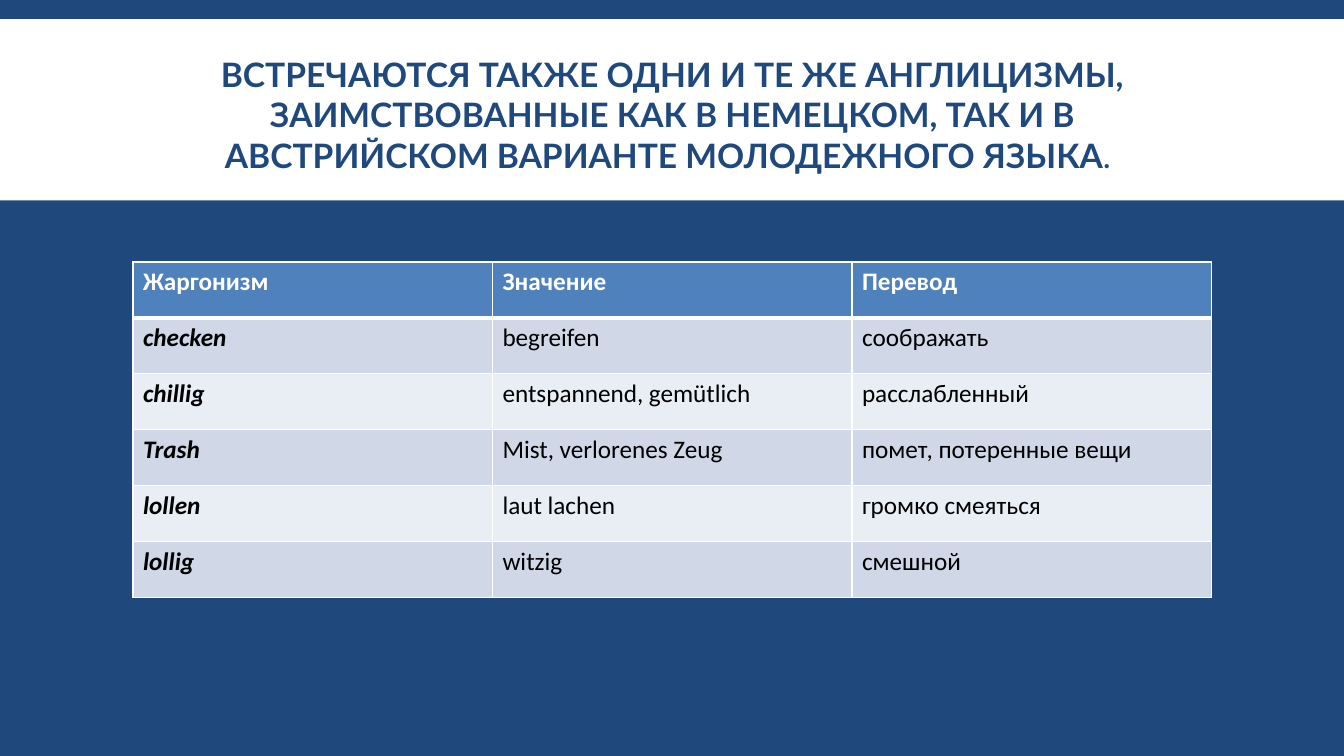
from dataclasses import dataclass

import pptx
import pptx.dml.color
import pptx.enum.shapes
import pptx.enum.text
import pptx.oxml.xmlchemy
import pptx.util
from lxml import etree
from pptx.util import Cm, Pt

NAVY, BLUE, WHITE, BLACK = "1F497D", "4F81BD", "FFFFFF", "000000"
BANDS = ("D0D8E8", "E9EDF4")
A = "http://schemas.openxmlformats.org/drawingml/2006/main"


@dataclass
class Style:
    font: str
    size: float
    color: str
    bold: bool = False
    italic: bool = False


@dataclass
class Term:
    slang: str
    meaning: str
    translation: str


HEADER = Term("Жаргонизм", "Значение", "Перевод")
TERMS = [
    Term("checken", "begreifen", "соображать"),
    Term("chillig", "entspannend, gemütlich", "расслабленный"),
    Term("Trash", "Mist, verlorenes Zeug", "помет, потеренные вещи"),
    Term("lollen", "laut lachen", "громко смеяться"),
    Term("lollig", "witzig", "смешной"),
]

HEAD_STYLE = Style("Calibri", 18, WHITE, bold=True)
SLANG_STYLE = Style("Calibri", 18, BLACK, bold=True, italic=True)
PLAIN_STYLE = Style("Calibri", 18, BLACK)


def rgb(value: str) -> pptx.dml.color.RGBColor:
    return pptx.dml.color.RGBColor.from_string(value)


def fill(target, color: str) -> None:
    target.fill.solid()
    target.fill.fore_color.rgb = rgb(color)


def add_run(p, text: str, style: Style) -> None:
    r = p.add_run()
    r.text = text
    r.font.name = style.font
    r.font.size = Pt(style.size)
    r.font.bold = style.bold
    r.font.italic = style.italic
    r.font.color.rgb = rgb(style.color)


def set_borders(cell, widths: dict[str, float]) -> None:
    """Draw white cell borders; they must precede the fill in tcPr."""
    tc_pr = cell._tc.get_or_add_tcPr()
    for i, (side, width) in enumerate(widths.items()):
        ln = etree.Element(f"{{{A}}}ln{side}", w=str(Pt(width)))
        solid = etree.SubElement(ln, f"{{{A}}}solidFill")
        etree.SubElement(solid, f"{{{A}}}srgbClr", val=WHITE)
        tc_pr.insert(i, ln)


def add_title(s, width: int) -> None:
    # White band behind the title
    band = s.shapes.add_shape(pptx.enum.shapes.MSO_SHAPE.RECTANGLE,
                              0, Cm(0.48), width, Cm(4.57))
    band.shadow.inherit = False
    fill(band, WHITE)
    band.line.fill.background()

    # Title placeholder, in front of the band
    title = s.shapes.title
    title._element.addprevious(band._element)
    title.left, title.top, title.width, title.height = Cm(3.35), Cm(0.79), Cm(27.18), Cm(4.19)
    tf = title.text_frame
    tf.word_wrap = True
    tf.auto_size = pptx.enum.text.MSO_AUTO_SIZE.NONE
    tf.margin_left = tf.margin_right = Cm(0.5)
    tf.vertical_anchor = pptx.enum.text.MSO_ANCHOR.MIDDLE
    p = tf.paragraphs[0]
    p.alignment = pptx.enum.text.PP_ALIGN.CENTER
    add_run(p, "ВСТРЕЧАЮТСЯ ТАКЖЕ ОДНИ И ТЕ ЖЕ АНГЛИЦИЗМЫ, ЗАИМСТВОВАННЫЕ КАК "
               "В НЕМЕЦКОМ, ТАК И В АВСТРИЙСКОМ ВАРИАНТЕ МОЛОДЕЖНОГО ЯЗЫКА",
            Style("Lato", 24, NAVY, bold=True))
    add_run(p, ". ", Style("Lato", 24, NAVY))


def add_terms(s) -> None:
    rows = [HEADER, *TERMS]
    table = s.shapes.add_table(len(rows), 3, Cm(3.35), Cm(6.6),
                               Cm(27.18), Cm(8.46)).table
    for i, term in enumerate(rows):
        for j, text in enumerate((term.slang, term.meaning, term.translation)):
            cell = table.cell(i, j)
            if i == 0:
                color, style = BLUE, HEAD_STYLE
            else:
                color = BANDS[(i - 1) % 2]
                style = SLANG_STYLE if j == 0 else PLAIN_STYLE
            fill(cell, color)
            set_borders(cell, {"L": 1, "R": 1, "T": 3 if i == 1 else 1,
                               "B": 3 if i == 0 else 1})
            add_run(cell.text_frame.paragraphs[0], text, style)


def main() -> None:
    prs = pptx.Presentation()
    prs.slide_width, prs.slide_height = Cm(33.87), Cm(19.05)
    s = prs.slides.add_slide(prs.slide_layouts[5])
    fill(s.background, NAVY)
    add_title(s, prs.slide_width)
    add_terms(s)
    prs.save("out.pptx")


if __name__ == "__main__":
    main()
